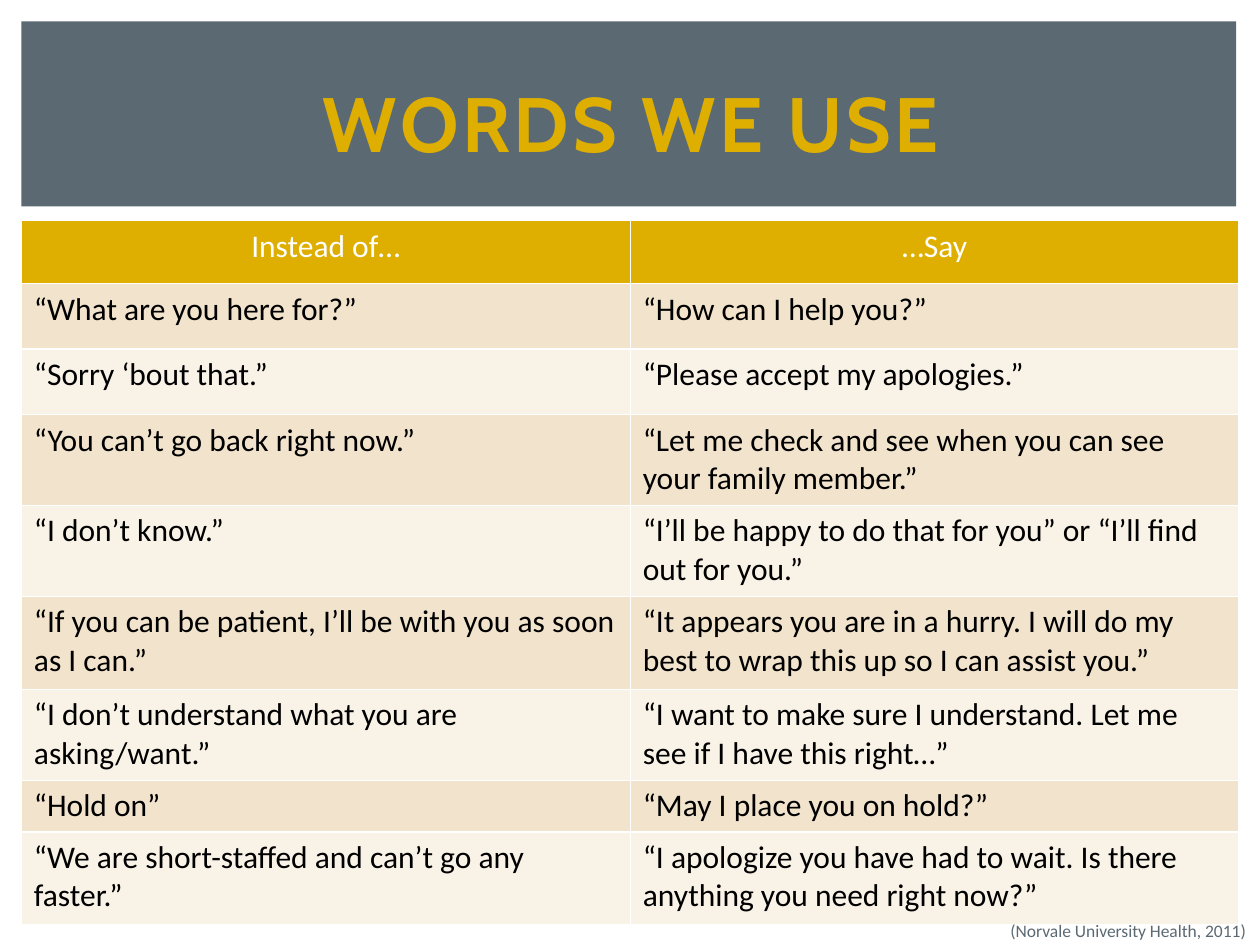
from dataclasses import dataclass

from lxml.etree import SubElement
from pptx import Presentation
from pptx.dml.color import RGBColor as Rgb
from pptx.enum.shapes import MSO_SHAPE as Shape
from pptx.enum.text import MSO_ANCHOR as Anchor, PP_ALIGN as Align
from pptx.oxml.ns import qn
from pptx.util import Cm, Pt


@dataclass(frozen=True)
class Theme:
    slate: Rgb = Rgb(0x5B, 0x69, 0x73)
    gold: Rgb = Rgb(0xDE, 0xAE, 0x00)
    sand: Rgb = Rgb(0xF2, 0xE3, 0xCC)
    cream: Rgb = Rgb(0xF9, 0xF2, 0xE7)
    white: Rgb = Rgb(0xFF, 0xFF, 0xFF)
    black: Rgb = Rgb(0, 0, 0)
    head: str = "Cabin"
    body: str = "Calibri"
    title: int = 44
    text: int = 18
    note: int = 10


THEME = Theme()
TITLE = "WORDS WE USE"
CREDIT = "(Norvale University Health, 2011)"
HEADS = ("Instead of…", "…Say")
# Row height in cm, then the phrase to avoid and the phrase to use
PHRASES = [
    (1.32, "“What are you here for?”", "“How can I help you?”"),
    (1.32, "“Sorry ‘bout that.”", "“Please accept my apologies.”"),
    (1.83, "“You can’t go back right now.”",
     "“Let me check and see when you can see your family member.”"),
    (1.83, "“I don’t know.”",
     "“I’ll be happy to do that for you” or “I’ll find out for you.”"),
    (1.88, "“If you can be patient, I’ll be with you as soon as I can.”",
     "“It appears you are in a hurry. I will do my best to wrap this up "
     "so I can assist you.”"),
    (1.83, "“I don’t understand what you are asking/want.”",
     "“I want to make sure I understand. Let me see if I have this right…”"),
    (1.04, "“Hold on”", "“May I place you on hold?”"),
    (1.88, "“We are short-staffed and can’t go any faster.”",
     "“I apologize you have had to wait. Is there anything you need "
     "right now?”"),
]


def write(frame, text, size, color, font=THEME.body, align=None, bold=False):
    para = frame.paragraphs[0]
    para.text = text
    para.alignment = align
    para.font.name = font
    para.font.size = Pt(size)
    para.font.bold = bold
    para.font.color.rgb = color
    return para


def add_text(slide, left, top, width, height, text, *style, **extra):
    box = slide.shapes.add_textbox(Cm(left), Cm(top), Cm(width), Cm(height))
    box.text_frame.word_wrap = True
    return box.text_frame, write(box.text_frame, text, *style, **extra)


def edge(cell, color, width=1):
    """Rule all four sides of a cell; call before its fill is set."""
    props = cell._tc.get_or_add_tcPr()
    for side in ("lnL", "lnR", "lnT", "lnB"):
        line = SubElement(props, qn(f"a:{side}"), w=str(Pt(width)))
        fill = SubElement(line, qn("a:solidFill"))
        SubElement(fill, qn("a:srgbClr"), val=str(color))


def add_banner(slide, left, top, width, height):
    band = slide.shapes.add_shape(
        Shape.RECTANGLE, Cm(left), Cm(top), Cm(width), Cm(height))
    band.shadow.inherit = False
    band.fill.solid()
    band.fill.fore_color.rgb = THEME.slate
    band.line.fill.background()
    frame, para = add_text(
        slide, left + 0.64, top + 0.56, width - 1.19, height - 0.81, TITLE,
        THEME.title, THEME.gold, font=THEME.head, align=Align.CENTER, bold=True)
    frame.vertical_anchor = Anchor.MIDDLE
    para.runs[0].font._element.set("spc", "200")


def add_phrases(slide, left, top, width):
    rows = [(1.27, *HEADS), *PHRASES]
    total = sum(row[0] for row in rows)
    grid = slide.shapes.add_table(
        len(rows), len(HEADS), Cm(left), Cm(top), Cm(width), Cm(total)).table
    grid.first_row = grid.horz_banding = False
    for col in grid.columns:
        col.width = Cm(width / len(HEADS))
    for r, (height, *texts) in enumerate(rows):
        grid.rows[r].height = Cm(height)
        if r == 0:
            fill, color, align = THEME.gold, THEME.white, Align.CENTER
        else:
            fill = THEME.sand if r % 2 else THEME.cream
            color, align = THEME.black, None
        for cell, text in zip(grid.rows[r].cells, texts):
            edge(cell, THEME.white)
            cell.fill.solid()
            cell.fill.fore_color.rgb = fill
            write(cell.text_frame, text, THEME.text, color, align=align)


def add_credit(slide, left, top, width, height):
    add_text(slide, left, top, width, height, CREDIT, THEME.note, THEME.slate)


def main():
    deck = Presentation()
    deck.slide_width, deck.slide_height = Cm(25.4), Cm(19.05)
    slide = deck.slides.add_slide(deck.slide_layouts[6])
    add_banner(slide, 0.43, 0.43, 24.49, 3.73)
    add_phrases(slide, 0.43, 4.45, 24.55)
    add_credit(slide, 20.12, 18.42, 5.72, 0.69)
    deck.save("out.pptx")


if __name__ == "__main__":
    main()
